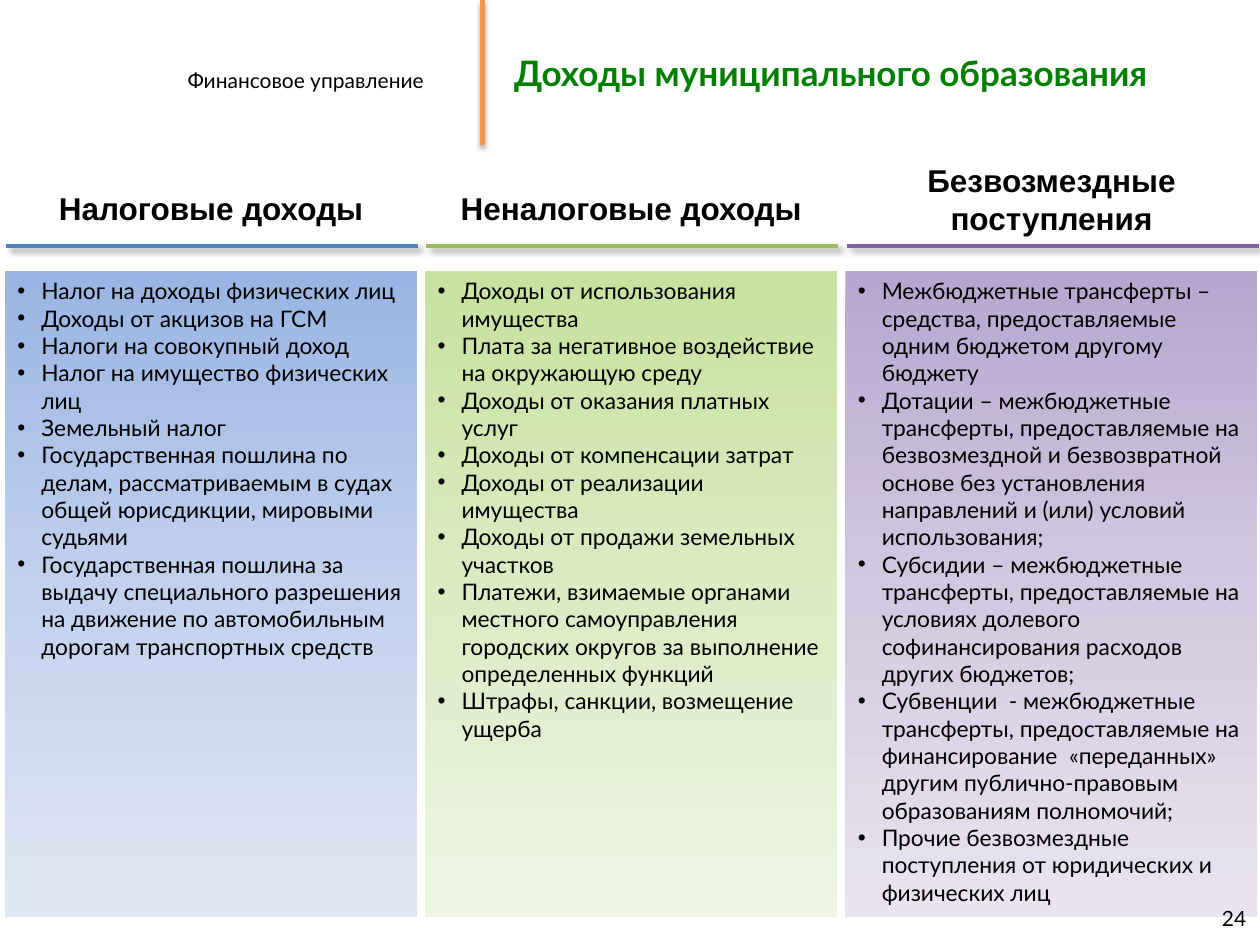
"""Build the slide on the three kinds of municipal revenue."""
from lxml.etree import SubElement
from pptx import Presentation
from pptx.dml.color import RGBColor
from pptx.enum.shapes import MSO_CONNECTOR as Connector, MSO_SHAPE as Shape
from pptx.enum.text import MSO_ANCHOR as Anchor, PP_ALIGN as Align
from pptx.oxml.ns import qn
from pptx.util import Inches, Pt

COLORS = {"text": "000000", "title": "008000", "divider": "F79646"}
COLUMNS = [
    {
        "heading": ["Налоговые доходы"],
        "heading_top": 1.45,
        "line": "4F81BD",
        "gradient": ["9AB5E4", "C2D1ED", "E1E8F5"],
        "items": [
            "Налог на доходы физических лиц",
            "Доходы от акцизов на ГСМ",
            "Налоги на совокупный доход",
            "Налог на имущество физических лиц",
            "Земельный налог",
            "Государственная пошлина по делам, рассматриваемым в судах общей юрисдикции, мировыми судьями",
            "Государственная пошлина за выдачу специального разрешения на движение по автомобильным дорогам транспортных средств",
        ],
    },
    {
        "heading": ["Неналоговые доходы"],
        "heading_top": 1.45,
        "line": "9BBB59",
        "gradient": ["C7E29E", "DBEBC4", "EDF5E2"],
        "items": [
            "Доходы от использования имущества",
            "Плата за негативное воздействие на окружающую среду",
            "Доходы от оказания платных услуг",
            "Доходы от компенсации затрат",
            "Доходы от реализации имущества",
            "Доходы от продажи земельных участков",
            "Платежи, взимаемые органами местного самоуправления городских округов за выполнение определенных функций",
            "Штрафы, санкции, возмещение ущерба",
        ],
    },
    {
        "heading": ["Безвозмездные", "поступления"],
        "heading_top": 1.23,
        "line": "8064A2",
        "gradient": ["B7A7D0", "D2C9E0", "E9E4EF"],
        "items": [
            "Межбюджетные трансферты – средства, предоставляемые одним бюджетом другому бюджету",
            "Дотации – межбюджетные трансферты, предоставляемые на безвозмездной и безвозвратной основе без установления направлений и (или) условий использования;",
            "Субсидии – межбюджетные трансферты, предоставляемые на условиях долевого софинансирования расходов других бюджетов;",
            "Субвенции  - межбюджетные трансферты, предоставляемые на финансирование  «переданных» другим публично-правовым образованиям полномочий;",
            "Прочие безвозмездные поступления от юридических и физических лиц",
        ],
    },
]


def write(frame, lines, size, font="Lato", color="text", bold=False, align=Align.LEFT, bullet=False):
    """Fill a text frame with evenly formatted paragraphs."""
    for index, line in enumerate(lines):
        para = frame.add_paragraph() if index else frame.paragraphs[0]
        para.text = line
        para.alignment = align
        if bullet:
            props = para._p.get_or_add_pPr()
            props.set("marL", str(Inches(0.19)))
            props.set("indent", str(Inches(-0.19)))
            SubElement(props, qn("a:buFont"), typeface="Arial")
            SubElement(props, qn("a:buChar"), char="•")
        para.font.name = font
        para.font.size = Pt(size)
        para.font.bold = bold
        para.font.color.rgb = RGBColor.from_string(COLORS[color])


def draw_line(start, end, color, width, blur, distance, angle, opacity):
    """Draw a straight line with a soft black shadow."""
    line = page.shapes.add_connector(Connector.STRAIGHT, *[Inches(n) for n in start + end])
    line.line.color.rgb = RGBColor.from_string(color)
    line.line.width = Pt(width)
    effects = SubElement(line._element.spPr, qn("a:effectLst"))
    shadow = SubElement(effects, qn("a:outerShdw"), blurRad=str(Pt(blur)), dist=str(Pt(distance)),
                        dir=str(angle * 60000), algn="tl", rotWithShape="0")
    black = SubElement(shadow, qn("a:srgbClr"), val="000000")
    SubElement(black, qn("a:alpha"), val=str(opacity * 1000))


deck = Presentation()
deck.slide_width, deck.slide_height = Inches(10), Inches(7.5)
page = deck.slides.add_slide(deck.slide_layouts[5])

title = page.shapes.title
title.left, title.top, title.width, title.height = Inches(3.98), Inches(0), Inches(6.02), Inches(1.15)
title.text_frame.vertical_anchor = Anchor.MIDDLE
write(title.text_frame, ["Доходы муниципального образования"], 20, color="title", bold=True)

department = page.shapes.add_textbox(Inches(1.39), Inches(0.39), Inches(2.1), Inches(0.36))
department.text_frame.word_wrap = False
write(department.text_frame, ["Финансовое управление"], 12)
department.text_frame.paragraphs[0].line_spacing = 1.5
draw_line((3.83, 0), (3.83, 1.15), COLORS["divider"], 3, 3.1, 1.8, 90, 35)

for number, column in enumerate(COLUMNS):
    left = 0.04 + number * 3.335
    panel = page.shapes.add_shape(Shape.RECTANGLE, Inches(left), Inches(2.15), Inches(3.27), Inches(5.13))
    panel.shadow.inherit = False
    panel.line.fill.background()
    panel.fill.gradient()
    panel.fill.gradient_angle = 270
    stops = panel._element.spPr.find(qn("a:gradFill")).find(qn("a:gsLst"))
    stops.clear()
    for position, color in zip((0, 50000, 100000), column["gradient"]):
        stop = SubElement(stops, qn("a:gs"), pos=str(position))
        SubElement(stop, qn("a:srgbClr"), val=color)
    panel.text_frame.word_wrap = True
    panel.text_frame.vertical_anchor = Anchor.TOP
    write(panel.text_frame, column["items"], 13, bullet=True)

    draw_line((left + 0.01, 1.95), (left + 3.28, 1.95), column["line"], 2.25, 4, 3, 45, 40)
    heading = page.shapes.add_textbox(Inches(left + 0.16), Inches(column["heading_top"]), Inches(2.95),
                                      Inches(0.1 + 0.3 * len(column["heading"])))
    heading.text_frame.word_wrap = False
    write(heading.text_frame, column["heading"], 18, font="Arial", bold=True, align=Align.CENTER)

page_number = page.shapes.add_textbox(Inches(7.66), Inches(7.09), Inches(2.33), Inches(0.4))
page_number.text_frame.word_wrap = True
page_number.text_frame.vertical_anchor = Anchor.MIDDLE
write(page_number.text_frame, ["24"], 12, align=Align.RIGHT)

deck.save("out.pptx")
